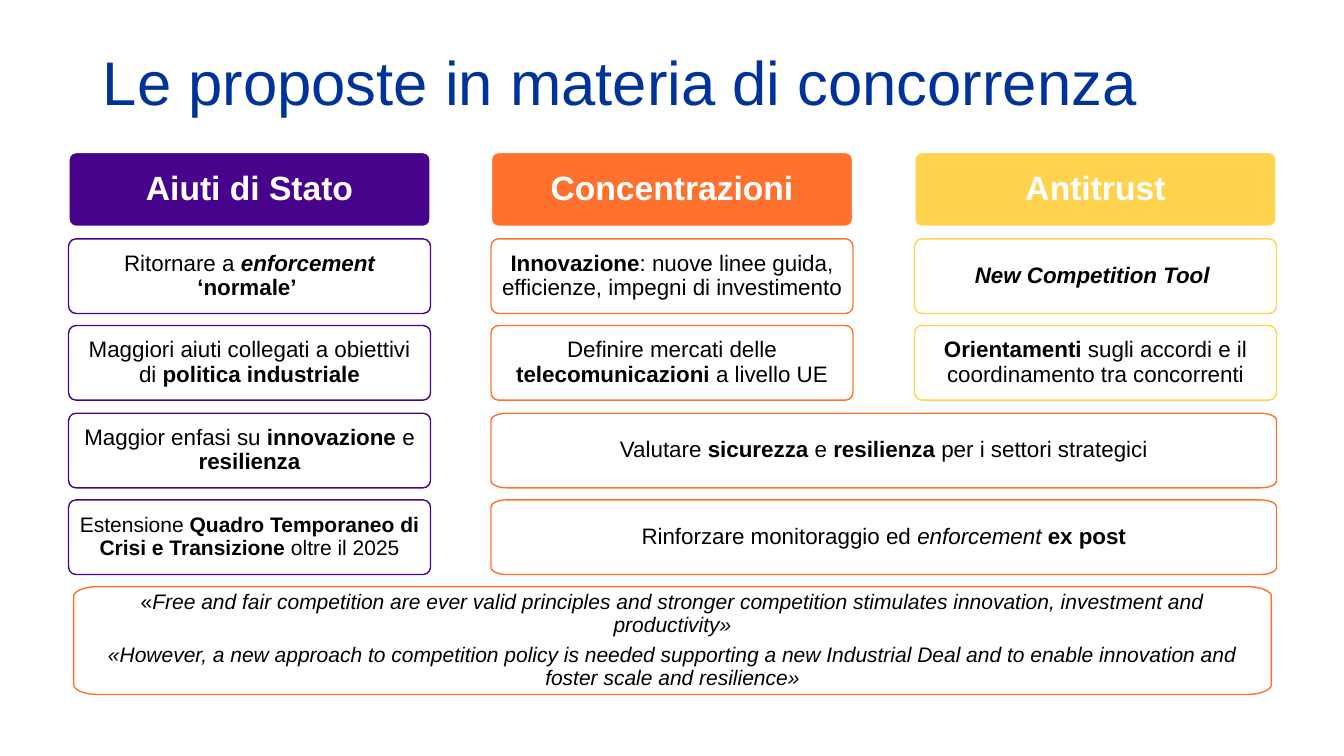
import math

from pptx import Presentation
from pptx import util as u
from pptx.dml.color import RGBColor
from pptx.enum import shapes, text

PX = 9144
FONT = "Arial"
HEX = {"blue": "003399", "violet": "48038C", "orange": "FF712C",
       "yellow": "FFD34E", "white": "FFFFFF", "black": "000000"}
TOP, HIGH, WIDE = 151, 74, 359
COLS = [68, 487, 907]
ROWS = [TOP + round(86.2 * row) for row in range(5)]

LISTS = [
    ("Aiuti di Stato", "violet", [
        (16, [("Ritornare a ", ""), ("enforcement ", "bi"), ("‘normale’ ", "b")]),
        (16, [("Maggiori aiuti collegati a obiettivi di ", ""),
              ("politica industriale", "b")]),
        (16, [("Maggior enfasi su ", ""), ("innovazione ", "b"), ("e", ""),
              (" resilienza", "b")]),
        (15, [("Estensione ", ""),
              ("Quadro Temporaneo di Crisi e Transizione ", "b"),
              ("oltre il 2025", "")]),
    ]),
    ("Concentrazioni", "orange", [
        (16, [("Innovazione", "b"),
              (": nuove linee guida, efficienze, impegni di investimento", "")]),
        (16, [("Definire mercati delle ", ""), ("telecomunicazioni", "b"),
              (" a livello UE", "")]),
    ]),
    ("Antitrust", "yellow", [
        (16, [("New Competition Tool ", "bi")]),
        (16, [("Orientamenti", "b"),
              (" sugli accordi e il coordinamento tra concorrenti", "")]),
    ]),
]
SHARED = [
    [("Valutare ", ""), ("sicurezza", "b"), (" e ", ""), ("resilienza", "b"),
     (" per i settori strategici", "")],
    [("Rinforzare monitoraggio ed ", ""), ("enforcement ", "i"), ("ex post", "b")],
]
QUOTES = [
    [("«", ""), ("Free and fair competition are ever valid principles and stronger "
                 "competition stimulates innovation, investment and productivity»", "i")],
    [("«However, a new approach to competition policy is needed supporting a new "
      "Industrial Deal and to enable innovation and foster scale and resilience»", "i")],
]


def rgb(name):
    """Return the named colour."""
    return RGBColor.from_string(HEX[name])


def write(shape, paras, size, color, inset):
    """Write centred paragraphs of (text, flags) runs into a shape."""
    frame = shape.text_frame
    frame.word_wrap = True
    frame.vertical_anchor = text.MSO_ANCHOR.MIDDLE
    frame.margin_left = frame.margin_right = inset * PX
    frame.margin_top = frame.margin_bottom = inset * PX
    for i, runs in enumerate(paras):
        para = frame.add_paragraph() if i else frame.paragraphs[0]
        para.alignment = text.PP_ALIGN.CENTER
        para.line_spacing = 0.9
        if i < len(paras) - 1:
            para.space_after = u.Pt(0.35 * size)
        for words, flags in runs:
            run = para.add_run()
            run.text = words
            font = run.font
            font.name, font.size = FONT, u.Pt(size)
            font.bold, font.italic = "b" in flags, "i" in flags
            font.color.rgb = rgb(color)


def paint(shape, fill, line, width):
    """Give a shape its fill and outline."""
    shape.shadow.inherit = False
    shape.fill.solid()
    shape.fill.fore_color.rgb = rgb(fill)
    shape.line.color.rgb = rgb(line)
    shape.line.width = u.Pt(width)


def card(slide, box):
    """Add a rounded box."""
    shape = slide.shapes.add_shape(
        shapes.MSO_SHAPE.ROUNDED_RECTANGLE, *[n * PX for n in box])
    shape.adjustments[0] = 0.1
    return shape


def panel(slide, box, paras, size, rx, ry):
    """Add an orange outlined box with elliptic corners."""
    x, y, w, h = box
    mids = [(x + w - rx, y + h - ry), (x + rx, y + h - ry),
            (x + rx, y + ry), (x + w - rx, y + ry)]
    points = []
    for i, (cx, cy) in enumerate(mids):
        for step in range(13):
            turn = math.radians(90 * i + 7.5 * step)
            points.append((round((cx + rx * math.cos(turn)) * PX),
                           round((cy + ry * math.sin(turn)) * PX)))
    pen = slide.shapes.build_freeform(*points[0])
    pen.add_line_segments(points[1:], close=True)
    shape = pen.convert_to_shape()
    paint(shape, "white", "orange", 1)
    write(shape, paras, size, "black", 8)


def column(slide, left, head, color, items):
    """Add a coloured heading with its outlined boxes below."""
    shape = card(slide, (left, ROWS[0], WIDE, HIGH))
    paint(shape, color, "white", 1.5)
    write(shape, [[(head, "b")]], 24, "white", 10)
    for top, (size, runs) in zip(ROWS[1:], items):
        shape = card(slide, (left, top, WIDE, HIGH))
        paint(shape, "white", color, 1)
        write(shape, [runs], size, "black", 7)


def title(slide, box, words):
    """Place and format the title."""
    shape = slide.shapes.title
    shape.left, shape.top, shape.width, shape.height = [n * PX for n in box]
    shape.fill.solid()
    shape.fill.fore_color.rgb = rgb("white")
    frame = shape.text_frame
    frame.text = words
    frame.auto_size = text.MSO_AUTO_SIZE.NONE
    frame.vertical_anchor = text.MSO_ANCHOR.MIDDLE
    para = frame.paragraphs[0]
    para.alignment = text.PP_ALIGN.LEFT
    para.line_spacing = 0.9
    font = para.runs[0].font
    font.name, font.size = FONT, u.Pt(44)
    font.color.rgb = rgb("blue")


def main():
    """Build and save the slide."""
    deck = Presentation()
    deck.slide_width, deck.slide_height = 1333 * PX, 750 * PX
    slide = deck.slides.add_slide(deck.slide_layouts[5])
    title(slide, (92, 40, 1150, 89), "Le proposte in materia di concorrenza")
    for left, (head, color, items) in zip(COLS, LISTS):
        column(slide, left, head, color, items)
    span = COLS[2] + WIDE - COLS[1]
    for top, runs in zip(ROWS[3:], SHARED):
        panel(slide, (COLS[1], top, span, HIGH), [runs], 16, 16, 7)
    panel(slide, (73, 582, 1188, 107), QUOTES, 15, 24, 10)
    deck.save("out.pptx")


if __name__ == "__main__":
    main()
